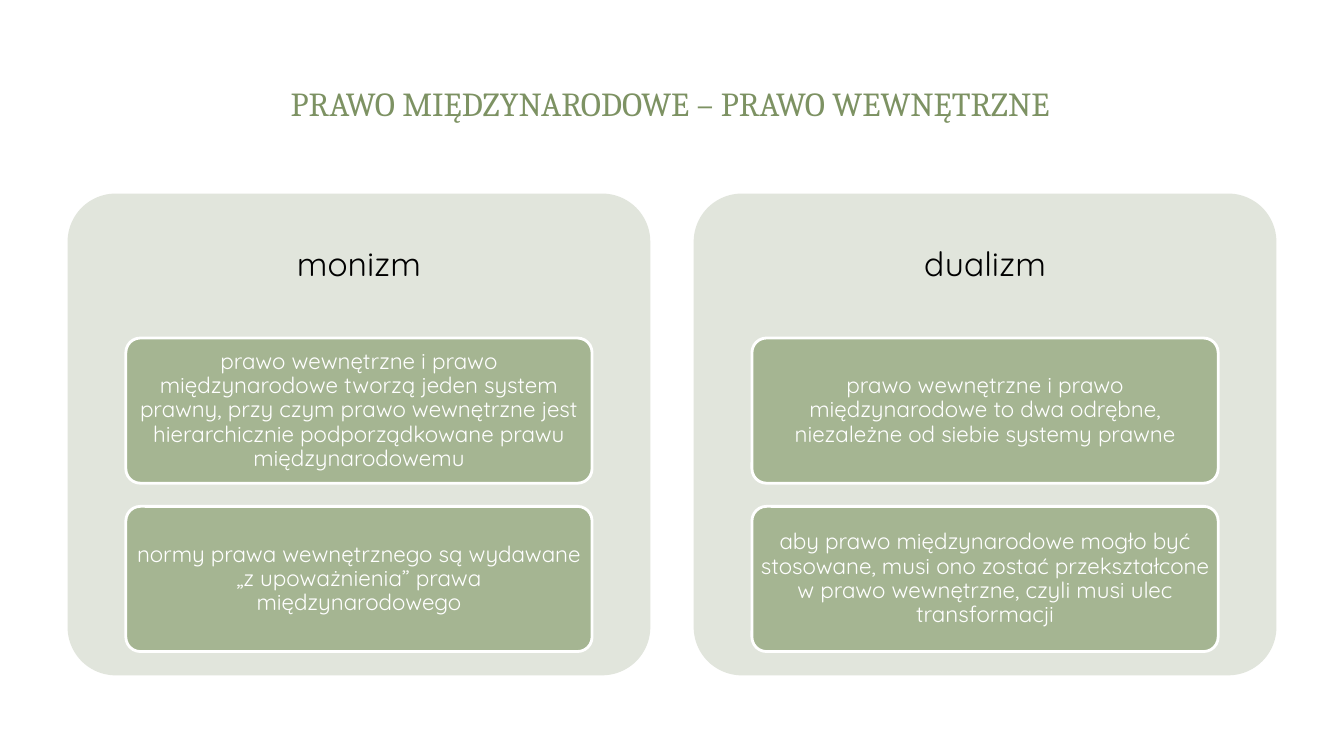
from pptx import Presentation
from pptx.dml.color import RGBColor
from pptx.enum.shapes import MSO_SHAPE as Preset
from pptx.enum.text import MSO_ANCHOR as Anchor, MSO_AUTO_SIZE as AutoSize, PP_ALIGN as Align
from pptx.util import Inches, Pt

SLIDE_SIZE = 13.33, 7.5
PANEL_LEFT, PANEL_TOP = 0.67, 1.92
PANEL_WIDTH, PANEL_HEIGHT = 5.78, 4.78
PANEL_STEP = 6.21
HEADING_SHARE = 0.3
CARD_INDENT_SHARE = 0.1
CARD_HEIGHT, CARD_STEP = 1.44, 1.67

HEADING_FONT, BODY_FONT = "Cambria", "Quicksand"
WHITE, BLACK = "FFFFFF", "000000"
TITLE_GREEN, PANEL_GREEN, CARD_GREEN = "7D9263", "E1E5DC", "A5B592"

TITLE = "PRAWO MIĘDZYNARODOWE – PRAWO WEWNĘTRZNE"
THEORIES = [
    ("monizm", [
        "prawo wewnętrzne i prawo międzynarodowe tworzą jeden system prawny, "
        "przy czym prawo wewnętrzne jest hierarchicznie podporządkowane prawu międzynarodowemu",
        "normy prawa wewnętrznego są wydawane „z upoważnienia” prawa międzynarodowego",
    ]),
    ("dualizm", [
        "prawo wewnętrzne i prawo międzynarodowe to dwa odrębne, "
        "niezależne od siebie systemy prawne",
        "aby prawo międzynarodowe mogło być stosowane, musi ono zostać przekształcone "
        "w prawo wewnętrzne, czyli musi ulec transformacji",
    ]),
]


def paint(colour_format, hex_colour):
    colour_format.rgb = RGBColor.from_string(hex_colour)


def inches(*lengths):
    return [Inches(length) for length in lengths]


def write(frame, words, size, font_name, colour, insets, line_spacing=0.9):
    frame.word_wrap = True
    frame.auto_size = AutoSize.NONE
    frame.vertical_anchor = Anchor.MIDDLE
    frame.margin_left = frame.margin_right = Inches(insets[0])
    frame.margin_top = frame.margin_bottom = Inches(insets[1])
    paragraph = frame.paragraphs[0]
    paragraph.alignment = Align.CENTER
    paragraph.line_spacing = line_spacing
    run = paragraph.add_run()
    run.text = words
    run.font.size = Pt(size)
    run.font.name = font_name
    paint(run.font.color, colour)


def add_title(slide):
    title = slide.shapes.title
    title.left, title.top, title.width, title.height = inches(0.62, 0.45, 12.05, 1.14)
    write(title.text_frame, TITLE, 24, HEADING_FONT, TITLE_GREEN, (0.1, 0.05), 1.0)


def add_rounded(slide, left, top, width, height, fill):
    block = slide.shapes.add_shape(
        Preset.ROUNDED_RECTANGLE, *inches(left, top, width, height))
    block.adjustments[0] = 0.1
    block.shadow.inherit = False
    block.fill.solid()
    paint(block.fill.fore_color, fill)
    block.line.fill.background()
    return block


def add_card(slide, left, top, statement):
    width = PANEL_WIDTH * (1 - 2 * CARD_INDENT_SHARE)
    card = add_rounded(slide, left, top, width, CARD_HEIGHT, CARD_GREEN)
    card.line.fill.solid()
    paint(card.line.fill.fore_color, WHITE)
    card.line.width = Pt(2)
    write(card.text_frame, statement, 16, BODY_FONT, WHITE, (0.04, 0.03))


def add_theory(slide, column, heading, statements):
    left = PANEL_LEFT + column * PANEL_STEP
    heading_height = PANEL_HEIGHT * HEADING_SHARE
    add_rounded(slide, left, PANEL_TOP, PANEL_WIDTH, PANEL_HEIGHT, PANEL_GREEN)
    label = slide.shapes.add_textbox(
        *inches(left, PANEL_TOP, PANEL_WIDTH, heading_height))
    write(label.text_frame, heading, 24, BODY_FONT, BLACK, (0.1, 0.1))
    for row, statement in enumerate(statements):
        add_card(slide, left + PANEL_WIDTH * CARD_INDENT_SHARE,
                 PANEL_TOP + heading_height + row * CARD_STEP, statement)


def main():
    deck = Presentation()
    deck.slide_width, deck.slide_height = inches(*SLIDE_SIZE)
    slide = deck.slides.add_slide(deck.slide_layouts.get_by_name("Title Only"))
    add_title(slide)
    for column, (heading, statements) in enumerate(THEORIES):
        add_theory(slide, column, heading, statements)
    deck.save("out.pptx")


if __name__ == "__main__":
    main()
